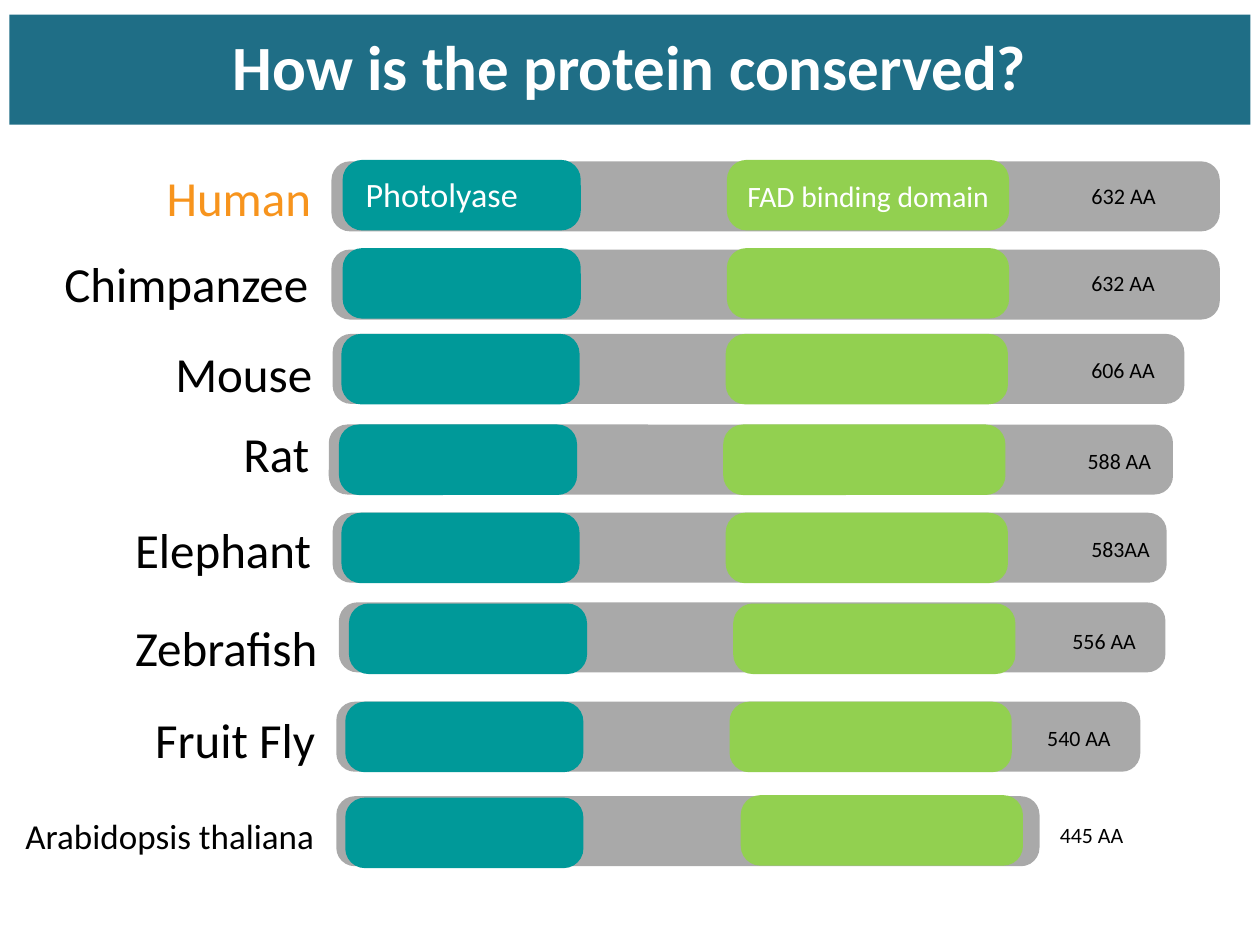
from dataclasses import dataclass

from pptx import Presentation
from pptx.dml.color import RGBColor
from pptx.enum.shapes import MSO_SHAPE
from pptx.enum.text import MSO_ANCHOR, MSO_AUTO_SIZE, PP_ALIGN
from pptx.util import Pt

RECTANGLE = MSO_SHAPE.RECTANGLE
ROUNDED = MSO_SHAPE.ROUNDED_RECTANGLE
MIDDLE = MSO_ANCHOR.MIDDLE
GROW = MSO_AUTO_SIZE.SHAPE_TO_FIT_TEXT
CENTER = PP_ALIGN.CENTER


@dataclass(frozen=True)
class Theme:
    font: str = "Calibri"
    banner: str = "1F6E86"
    protein: str = "A9A9A9"
    photolyase: str = "009999"
    fad: str = "92D050"
    highlight: str = "F7941D"
    dark: str = "000000"
    light: str = "FFFFFF"
    title_size: float = 36
    species_size: float = 28
    long_species_size: float = 20
    photolyase_size: float = 19.5
    fad_size: float = 16.9
    length_size: float = 12.5
    human_length_size: float = 12.7


THEME = Theme()
BAR_HEIGHT = 40
DOMAIN_HEIGHT = 40.3
PHOTOLYASE_WIDTH = 136.1
FAD_WIDTH = 161.3


@dataclass(frozen=True)
class Species:
    name: str
    length: str
    label: tuple
    bar: tuple
    domains: tuple
    length_at: tuple
    fad_shift: tuple = (219.6, 0)
    color: str = THEME.dark
    size: float = THEME.species_size
    length_size: float = THEME.length_size


SPECIES = [
    Species("Human", "632 AA", (92.2, 92.9, 89.3), (189.4, 92.2, 507.6),
            (195.8, 91.4), (620.6, 101.5), color=THEME.highlight,
            length_size=THEME.human_length_size),
    Species("Chimpanzee", "632 AA", (33.8, 141.8, 146.2), (189.4, 142.6, 507.6),
            (195.8, 141.8), (620.6, 151.2)),
    Species("Mouse", "606 AA", (97.2, 193, 85), (190.1, 190.8, 486.7),
            (195.1, 190.8), (620.6, 200.9)),
    Species("Rat", "588 AA", (136.1, 239, 43.9), (187.9, 242.6, 482.4),
            (193.7, 242.6), (618.5, 252.7)),
    Species("Elephant", "583AA", (74.2, 293.8, 107.3), (190.1, 293, 476.6),
            (195.1, 293), (620.6, 303.1)),
    Species("Zebrafish", "556 AA", (74.2, 349.9, 110.9), (193.7, 344.2, 472.3),
            (199.4, 344.9), (609.8, 355.7)),
    Species("Fruit Fly", "540 AA", (85.7, 402.5, 97.9), (192.2, 401, 459.4),
            (197.3, 401), (595.4, 411.1)),
    Species("Arabidopsis thaliana", "445 AA", (11.5, 462.2, 172.1),
            (192.2, 455, 401.8), (197.3, 455.8), (602.6, 466.6),
            fad_shift=(226, -1.4), size=THEME.long_species_size),
]


def style_text(frame, text, size, color, bold=False):
    frame.text = text
    frame.vertical_anchor = MIDDLE
    font = frame.paragraphs[0].runs[0].font
    font.name = THEME.font
    font.size = Pt(size)
    font.bold = bold
    font.color.rgb = RGBColor.from_string(color)


def add_block(parent, kind, left, top, width, height, color):
    block = parent.shapes.add_shape(kind, Pt(left), Pt(top), Pt(width), Pt(height))
    block.shadow.inherit = False
    block.fill.solid()
    block.fill.fore_color.rgb = RGBColor.from_string(color)
    block.line.fill.background()
    return block


def add_bar(parent, left, top, width, height, color, rounding=0.28):
    bar = add_block(parent, ROUNDED, left, top, width, height, color)
    bar.adjustments[0] = rounding


def add_label(parent, text, left, top, width, height, size, color, wrap=False):
    box = parent.shapes.add_textbox(Pt(left), Pt(top), Pt(width), Pt(height))
    frame = box.text_frame
    frame.margin_left = frame.margin_right = Pt(3)
    frame.margin_top = frame.margin_bottom = Pt(3)
    frame.word_wrap = wrap
    frame.auto_size = GROW
    style_text(frame, text, size, color)


def add_title(page):
    banner = add_block(page, RECTANGLE, 5.3, 8.4, 709.2, 62.9, THEME.banner)
    style_text(banner.text_frame, "How is the protein conserved?",
               THEME.title_size, THEME.light, bold=True)
    para = banner.text_frame.paragraphs[0]
    para.alignment = CENTER
    para.line_spacing = 0.9


def add_species(page, species):
    group = page.shapes.add_group_shape()
    left, top = species.domains
    shift_x, shift_y = species.fad_shift
    add_bar(group, *species.bar, BAR_HEIGHT, THEME.protein, 0.264)
    add_bar(group, left + shift_x, top + shift_y, FAD_WIDTH, DOMAIN_HEIGHT, THEME.fad)
    add_bar(group, left, top, PHOTOLYASE_WIDTH, DOMAIN_HEIGHT, THEME.photolyase)
    add_label(group, species.length, *species.length_at, 56.2, 20.9,
              species.length_size, THEME.dark, wrap=True)
    add_label(group, species.name, *species.label, species.size * 1.2 + 6,
              species.size, species.color)
    return group


def add_domain_names(group):
    add_label(group, "FAD binding domain", 424.1, 98.6, 161.3, 25.9,
              THEME.fad_size, THEME.light, wrap=True)
    add_label(group, "Photolyase", 205.9, 95.8, 93.6, 29.5,
              THEME.photolyase_size, THEME.light)


def main():
    deck = Presentation()
    deck.slide_width, deck.slide_height = Pt(720), Pt(540)
    page = deck.slides.add_slide(deck.slide_layouts[6])
    add_title(page)
    groups = [add_species(page, species) for species in SPECIES]
    add_domain_names(groups[0])
    deck.save("out.pptx")


if __name__ == "__main__":
    main()
